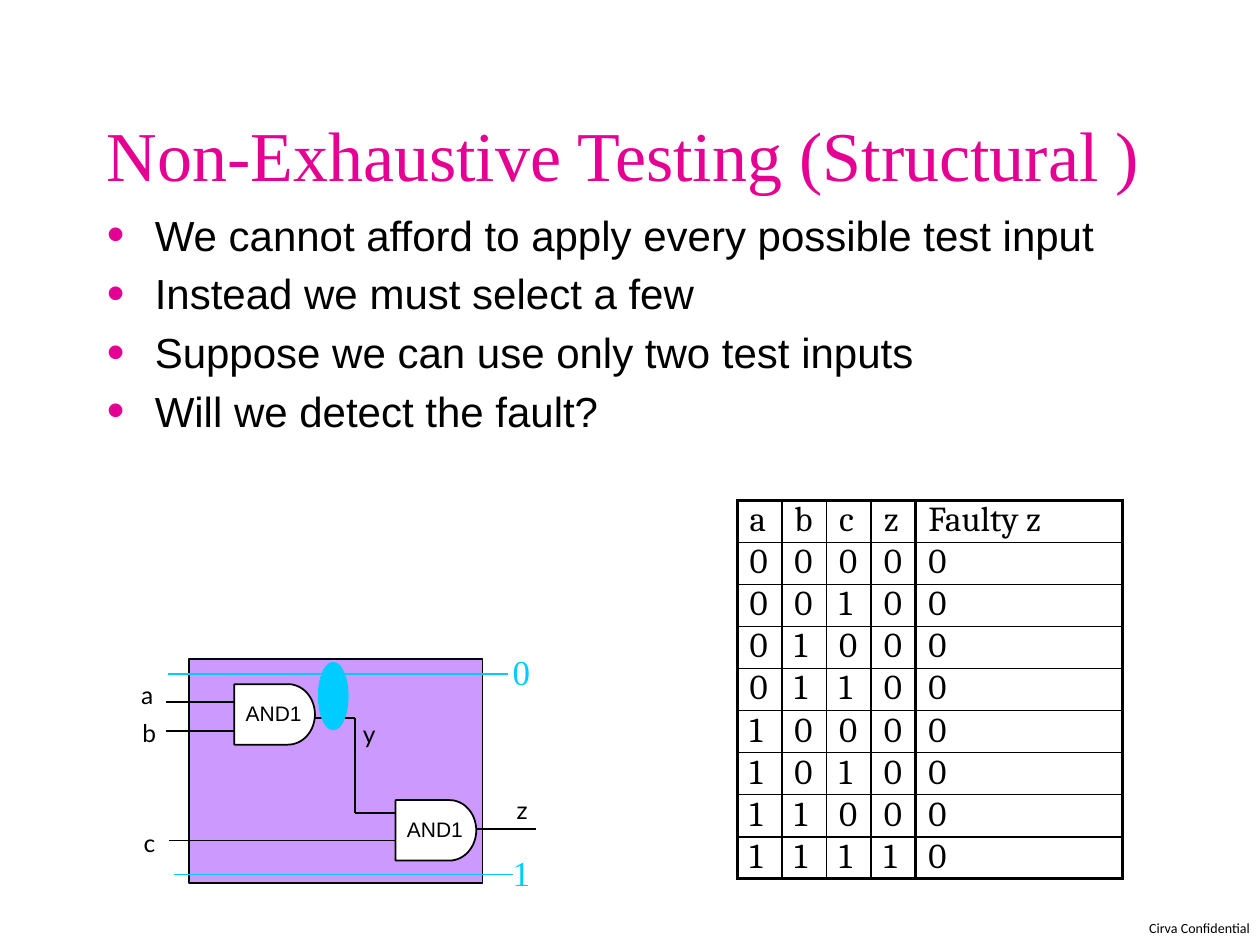
from math import cos, pi, sin

from lxml.etree import SubElement
from pptx import Presentation
from pptx.dml.color import RGBColor
from pptx.enum.shapes import MSO_CONNECTOR, MSO_SHAPE
from pptx.enum.text import MSO_ANCHOR
from pptx.oxml.ns import qn
from pptx.util import Emu, Inches, Pt

COLORS = {"ink": "000000", "paper": "FFFFFF", "title": "E50093",
          "block": "CC99FF", "fault": "00CCFF"}

# The slide is a grid of 1000 columns and 750 rows of square cells
WIDTH = Inches(10)
COLS, ROWS = 1000, 750
CELL = WIDTH // COLS


def grid(*counts):
    return [Emu(round(n * CELL)) for n in counts]


def rgb(name):
    return RGBColor.from_string(COLORS[name])


def style_runs(p, size, font, color="ink"):
    for r in p.runs:
        r.font.size = Pt(size)
        r.font.name = font
        r.font.color.rgb = rgb(color)


def style_shape(sp, fill, line):
    sp.shadow.inherit = False
    sp.fill.solid()
    sp.fill.fore_color.rgb = rgb(fill)
    sp.line.color.rgb = rgb(line)
    sp.line.width = Pt(1)


def add_text(shapes, box, text, size, font, color="ink", inset=(0, 0), wrap=False):
    tf = shapes.add_textbox(*grid(*box)).text_frame
    tf.word_wrap = wrap
    tf.margin_left = tf.margin_right = grid(inset[0])[0]
    tf.margin_top = tf.margin_bottom = grid(inset[1])[0]
    tf.text = text
    for p in tf.paragraphs:
        style_runs(p, size, font, color)
    return tf


def add_line(shapes, x1, y1, x2, y2, color="ink", width=1):
    c = shapes.add_connector(MSO_CONNECTOR.STRAIGHT, *grid(x1, y1, x2, y2))
    c.line.color.rgb = rgb(color)
    c.line.width = Pt(width)
    SubElement(c._element.spPr, qn("a:effectLst"))


def add_and_gate(shapes, left, top, width=64, height=48):
    """Flat left side, half-ellipse on the right, label inside."""
    rx, ry, steps = width / 3, height / 2, 32
    cx, cy = left + width - rx, top + ry
    angles = [-pi / 2 + pi * i / steps for i in range(steps + 1)]
    arc = [grid(cx + rx * cos(a), cy + ry * sin(a)) for a in angles]
    fb = shapes.build_freeform(*arc[0])
    fb.add_line_segments(arc[1:] + [grid(left, top + height), grid(left, top)], close=True)
    style_shape(fb.convert_to_shape(), "paper", "ink")
    add_text(shapes, (left + 9, top + 13, 54, 20), "AND1", 12, "Arial")


def add_circuit(slide):
    shapes = slide.shapes.add_group_shape().shapes
    block = shapes.add_shape(MSO_SHAPE.RECTANGLE, *grid(150, 523, 233, 178))
    style_shape(block, "block", "ink")
    # Wires: inputs a, b, c, the three legs of y, output z
    wires = [(132, 557, 194, 557), (132, 580, 194, 580), (325, 667, 134, 667),
             (232, 570, 282, 570), (282, 570, 282, 645), (282, 645, 324, 645),
             (367, 658, 425, 658)]
    for wire in wires:
        add_line(shapes, *wire)
    for left, top in [(186, 543), (314, 635)]:
        add_and_gate(shapes, left, top)
    signals = {"a": (112, 540), "b": (113, 570), "c": (114, 657),
               "y": (288, 571), "z": (410, 631)}
    for name, (left, top) in signals.items():
        add_text(shapes, (left, top, 12, 19), name, 14, "Lato")


def add_stuck_levels(slide):
    shapes = slide.shapes.add_group_shape().shapes
    add_line(shapes, 138, 694, 407, 694, "fault")
    add_line(shapes, 133, 535, 403, 535, "fault", 1.5)
    for level, top in [("0", 511), ("1", 671)]:
        add_text(shapes, (397, top, 35, 43), level, 20, "Times New Roman", "fault", (10, 5), True)


def set_borders(cell, widths):
    tcPr = cell._tc.get_or_add_tcPr()
    for side, width in zip("LRTB", widths):
        ln = SubElement(tcPr, qn(f"a:ln{side}"), w=str(Pt(width)))
        fill = SubElement(ln, qn("a:solidFill"))
        SubElement(fill, qn("a:srgbClr"), val=COLORS["ink"])


def add_truth_table(slide):
    head = ["a", "b", "c", "z", "Faulty z"]
    inputs = [(a, b, c) for a in (0, 1) for b in (0, 1) for c in (0, 1)]
    rows = [head] + [(a, b, c, a & b & c, 0) for a, b, c in inputs]
    last_row, last_col = len(rows) - 1, len(head) - 1
    table = slide.shapes.add_table(len(rows), len(head), *grid(585, 397, 306, 300)).table
    table.first_row = table.horz_banding = False
    for column, width in zip(table.columns, grid(*[35.5] * 4, 164)):
        column.width = width
    for i, values in enumerate(rows):
        table.rows[i].height = grid(300 / len(rows))[0]
        for j, value in enumerate(values):
            cell = table.cell(i, j)
            cell.margin_left = cell.margin_right = grid(10)[0]
            cell.margin_top = cell.margin_bottom = 0
            cell.text = str(value)
            style_runs(cell.text_frame.paragraphs[0], 20, "Cambria")
            # Heavy frame, and a heavy rule before the faulty output
            heavy = (j in (0, last_col), j >= last_col - 1, i == 0, i == last_row)
            set_borders(cell, [2 if h else 1 for h in heavy])
            cell.fill.background()


def add_bullets(slide, box, lines):
    tf = add_text(slide.shapes, box, "\n".join(lines), 24, "Arial", inset=(10, 6), wrap=True)
    indent = grid(38)[0]
    for i, p in enumerate(tf.paragraphs):
        if i:
            p.space_before = Pt(4.7)
        pPr = p._p.get_or_add_pPr()
        pPr.set("marL", str(indent))
        pPr.set("indent", str(-indent))
        color = SubElement(pPr, qn("a:buClr"))
        SubElement(color, qn("a:srgbClr"), val=COLORS["title"])
        SubElement(pPr, qn("a:buSzPct"), val="120000")
        SubElement(pPr, qn("a:buFont"), typeface="Arial")
        SubElement(pPr, qn("a:buChar"), char="•")


def main():
    prs = Presentation()
    prs.slide_width, prs.slide_height = grid(COLS, ROWS)
    slide = prs.slides.add_slide(prs.slide_layouts[6])
    # Footer
    add_text(slide.shapes, (912, 730, 84, 13), "Cirva Confidential", 8, "Calibri")
    add_circuit(slide)
    # Title
    tf = add_text(slide.shapes, (75, 52, 850, 140), "Non-Exhaustive Testing (Structural )",
                  40, "Times New Roman", "title", (10, 5), True)
    tf.vertical_anchor = MSO_ANCHOR.MIDDLE
    add_stuck_levels(slide)
    add_truth_table(slide)
    # Fault marker on wire y
    fault = slide.shapes.add_shape(MSO_SHAPE.OVAL, *grid(253, 526, 23, 53))
    style_shape(fault, "fault", "fault")
    add_bullets(slide, (75, 160, 878, 203), [
        "We cannot afford to apply every possible test input",
        "Instead we must select a few",
        "Suppose we can use only two test inputs",
        "Will we detect the fault?"])
    prs.save("out.pptx")


if __name__ == "__main__":
    main()
